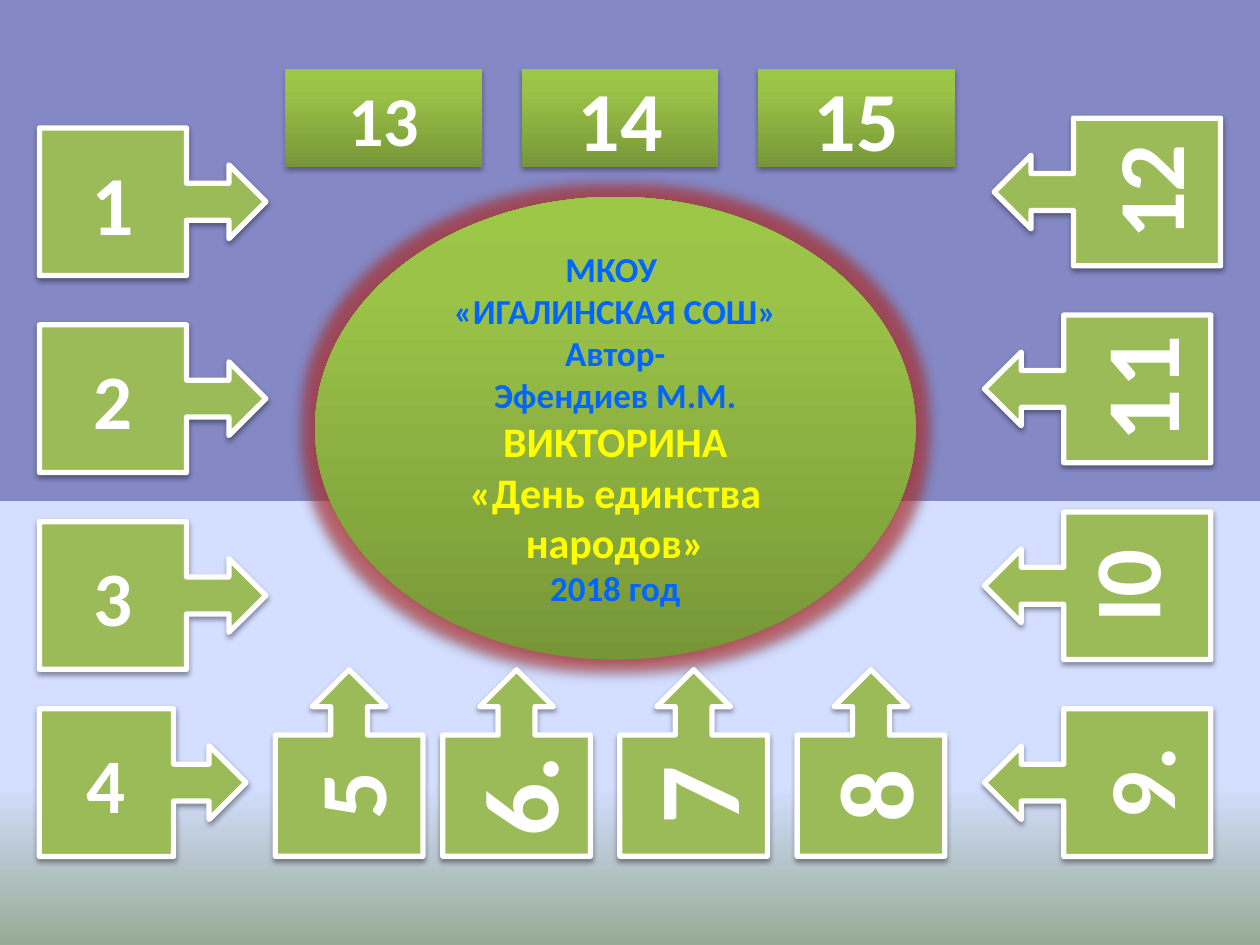
import pptx
import pptx.util
import pptx.dml.color
import pptx.enum.shapes
import pptx.enum.text
import pptx.oxml
import pptx.oxml.ns

Pt = pptx.util.Pt
SHAPE = pptx.enum.shapes.MSO_SHAPE
GREEN = [(0, "779737"), (80, "9BC348"), (100, "9DC746")]
SKY = [(53, "8488C4"), (53, "D4DEFF"), (83, "D4DEFF"), (100, "96AB94")]


def color(code):
    return pptx.dml.color.RGBColor.from_string(code)


def parse(tag, attrs, body):
    space = pptx.oxml.ns.nsdecls("a")
    return pptx.oxml.parse_xml(f"<a:{tag} {space} {attrs}>{body}</a:{tag}>")


def blend(fill, owner, stops, angle):
    fill.gradient()
    old = owner.find(".//" + pptx.oxml.ns.qn("a:gradFill"))
    body = "".join(
        f'<a:gs pos="{pos * 1000}"><a:srgbClr val="{code}"/></a:gs>' for pos, code in stops
    )
    body = f'<a:gsLst>{body}</a:gsLst><a:lin ang="{angle * 60000}" scaled="0"/>'
    old.getparent().replace(old, parse("gradFill", 'rotWithShape="1"', body))


def shade(shape, alpha, dist, glow=""):
    body = (
        f'{glow}<a:outerShdw blurRad="{Pt(3.1)}" dist="{Pt(dist)}" dir="5400000" '
        f'rotWithShape="0"><a:srgbClr val="000000"><a:alpha val="{alpha * 1000}"/>'
        "</a:srgbClr></a:outerShdw>"
    )
    shape._element.spPr.append(parse("effectLst", "", body))


def write(shape, lines):
    frame = shape.text_frame
    frame.word_wrap = True
    frame.vertical_anchor = pptx.enum.text.MSO_ANCHOR.MIDDLE
    for num, (text, size, code) in enumerate(lines):
        para = frame.add_paragraph() if num else frame.paragraphs[0]
        para.text = text
        para.alignment = pptx.enum.text.PP_ALIGN.CENTER
        para.font.name = "Calibri"
        para.font.size = Pt(size)
        para.font.bold = True
        para.font.color.rgb = color(code)


def glossy(slide, kind, box, lines, glow=""):
    shape = slide.shapes.add_shape(kind, *map(Pt, box))
    blend(shape.fill, shape._element.spPr, GREEN, 270)
    shape.line.fill.background()
    shade(shape, 35, 1.8, glow)
    write(shape, lines)


def arrow(slide, box, text, size, turn=0, vert="horz"):
    shape = slide.shapes.add_shape(SHAPE.RIGHT_ARROW_CALLOUT, *map(Pt, box))
    shape.rotation = turn
    shape.fill.solid()
    shape.fill.fore_color.rgb = color("9BBB59")
    shape.line.color.rgb = color("FFFFFF")
    shape.line.width = Pt(3)
    shade(shape, 38, 1.6)
    write(shape, [(text, size, "FFFFFF")])
    shape.text_frame._txBody.bodyPr.set("vert", vert)


def title(slide):
    blue, gold = "0066FF", "FFFF00"
    lines = [
        ("МКОУ ", 20, blue),
        ("«ИГАЛИНСКАЯ СОШ»", 20, blue),
        ("Автор-", 20, blue),
        ("Эфендиев М.М.", 20, blue),
        ("ВИКТОРИНА", 24, gold),
        ("«День единства народов»", 24, gold),
        ("2018 год", 20, blue),
    ]
    glow = (
        f'<a:glow rad="{Pt(14)}"><a:srgbClr val="C0302C">'
        '<a:alpha val="60000"/></a:srgbClr></a:glow>'
    )
    glossy(slide, SHAPE.OVAL, (180, 112.5, 343.2, 264.4), lines, glow)


def main():
    deck = pptx.Presentation()
    deck.slide_width, deck.slide_height = Pt(720), Pt(540)
    slide = deck.slides.add_slide(deck.slide_layouts[6])
    blend(slide.background.fill, slide._element, SKY, 90)
    title(slide)

    wide, high, base = 129.4, 84.4, 405
    for row, size in enumerate([48, 44, 44]):
        arrow(slide, (22.5, 73.1 + 112.5 * row, wide, high), str(row + 1), size)
    arrow(slide, (22.5, base, 118.1, high), "4", 44)

    foot = [(146.2, "5", 54), (241.9, "6.", 60), (343.1, "7", 66), (444.4, "8", 60)]
    for left, text, size in foot:
        arrow(slide, (left, 393.8, 106.6, high), text, size, 270)

    right = [
        (568.1, 67.5, "12", 54, "vert"),
        (562.5, 180, "11", 60, "vert"),
        (562.5, 292.5, "0I", 54, "vert270"),
        (562.5, base, "9.", 54, "vert"),
    ]
    for left, top, text, size, vert in right:
        arrow(slide, (left, top, wide, high), text, size, 180, vert)

    for col, size in enumerate([40, 48, 48]):
        box = (163.1 + 135 * col, 39.4, 112.5, 56.2)
        glossy(slide, SHAPE.RECTANGLE, box, [(str(13 + col), size, "FFFFFF")])

    deck.save("out.pptx")


if __name__ == "__main__":
    main()
